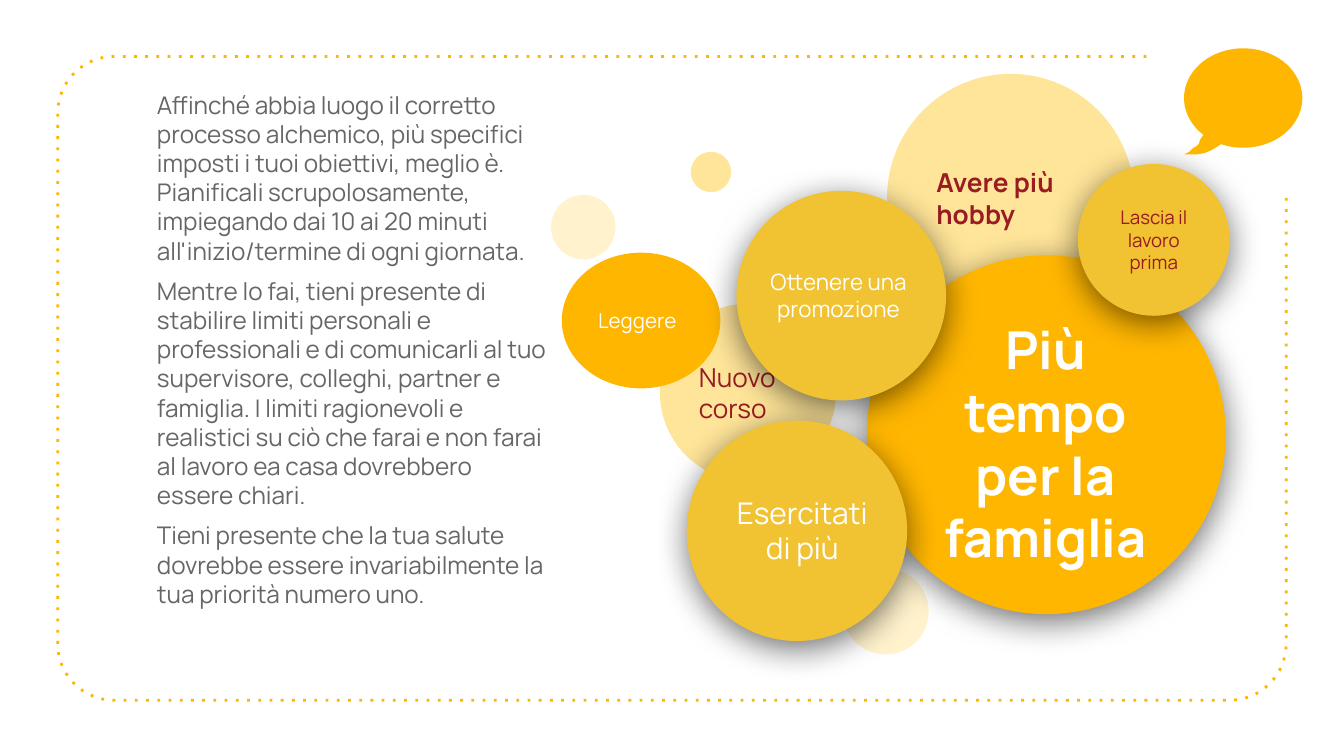
import math

import lxml.etree
import pptx
import pptx.dml.color
import pptx.enum.shapes
import pptx.enum.text
import pptx.oxml.ns
import pptx.util

Inches = pptx.util.Inches
qn = pptx.oxml.ns.qn
OVAL = pptx.enum.shapes.MSO_SHAPE.OVAL
LEFT = pptx.enum.text.PP_ALIGN.LEFT
CENTER = pptx.enum.text.PP_ALIGN.CENTER
MIDDLE = pptx.enum.text.MSO_ANCHOR.MIDDLE
TOP = pptx.enum.text.MSO_ANCHOR.TOP


class Theme:
    font = "Manrope"
    amber = pptx.dml.color.RGBColor.from_string("FFB600")
    gold = pptx.dml.color.RGBColor.from_string("F1C232")
    sand = pptx.dml.color.RGBColor.from_string("FFE599")
    cream = pptx.dml.color.RGBColor.from_string("FFF2CC")
    red = pptx.dml.color.RGBColor.from_string("981C22")
    gray = pptx.dml.color.RGBColor.from_string("666666")
    white = pptx.dml.color.RGBColor.from_string("FFFFFF")
    tiny, small, label, body, medium, large, hero = map(
        pptx.util.Pt, (10, 11, 12, 13, 14, 16, 28))


def arc(center_x, center_y, radius_x, radius_y, start, end, steps):
    angles = [math.radians(start + (end - start) * step / steps) for step in range(steps + 1)]
    return [(Inches(center_x + radius_x * math.cos(angle)),
             Inches(center_y + radius_y * math.sin(angle))) for angle in angles]


def write_text(shape, paragraphs, size, color, bold=False, align=LEFT, anchor=MIDDLE, gap=0):
    frame = shape.text_frame
    frame.word_wrap = True
    frame.vertical_anchor = anchor
    frame.margin_left = frame.margin_right = Inches(0.1)
    frame.margin_top = frame.margin_bottom = Inches(0.1)
    frame.text = "\n".join(paragraphs)
    for para in frame.paragraphs:
        para.alignment = align
        para.space_before = pptx.util.Pt(gap)
        para.font.name = Theme.font
        para.font.size = size
        para.font.bold = bold
        para.font.color.rgb = color


deck = pptx.Presentation()
deck.slide_width = Inches(10)
deck.slide_height = deck.slide_width * 9 // 16
page = deck.slides.add_slide(deck.slide_layouts[6])

border_points = [(Inches(8.53), Inches(0.42))]
for center_x, center_y, start in ((0.85, 0.84, 270), (0.85, 4.79, 180), (9.15, 4.79, 90)):
    border_points += arc(center_x, center_y, 0.42, 0.42, start, start - 90, 16)
border_points.append((Inches(9.57), Inches(1.46)))
builder = page.shapes.build_freeform(*border_points[0])
builder.add_line_segments(border_points[1:], close=False)
border = builder.convert_to_shape()
border.shadow.inherit = False
border.fill.background()
border.line.color.rgb = Theme.amber
border.line.width = pptx.util.Pt(1.5)
lxml.etree.SubElement(border.element.spPr.find(qn("a:ln")), qn("a:prstDash"), val="dot")

flat_circles = [
    (6.27, 4.23, 0.64, 0.64, Theme.cream, None),
    (4.1, 1.45, 0.48, 0.48, Theme.cream, None),
    (4.91, 2.26, 1.31, 1.32, Theme.sand, ("Nuovo corso", Theme.medium, Theme.red, False)),
    (6.6, 0.55, 1.84, 1.85, Theme.sand, ("Avere più hobby", Theme.medium, Theme.red, True)),
    (4.18, 1.88, 1.18, 1.01, Theme.amber, ("Leggere", Theme.small, Theme.white, False)),
    (5.14, 1.13, 0.3, 0.3, Theme.sand, None),
]
for left, top, width, height, fill, caption in flat_circles:
    circle = page.shapes.add_shape(OVAL, Inches(left), Inches(top), Inches(width), Inches(height))
    circle.shadow.inherit = False
    circle.fill.solid()
    circle.fill.fore_color.rgb = fill
    circle.line.fill.background()
    if caption:
        text, size, color, bold = caption
        write_text(circle, [text], size, color, bold)

raised_circles = [
    (6.45, 1.9, 2.67, Theme.amber, (6.76, 2.66, 2.04, 1.27),
     "Più tempo per la famiglia", Theme.hero, Theme.white, True),
    (5.48, 1.42, 1.56, Theme.gold, (5.61, 1.68, 1.26, 1.03),
     "Ottenere una promozione", Theme.label, Theme.white, False),
    (5.11, 3.13, 1.64, Theme.gold, (5.34, 3.43, 1.26, 1.03),
     "Esercitati di più", Theme.large, Theme.white, False),
    (8.02, 1.22, 1.13, Theme.gold, (8.2, 1.41, 0.77, 0.75),
     "Lascia il lavoro prima", Theme.tiny, Theme.red, False),
]
for left, top, diameter, fill, label_area, text, size, color, bold in raised_circles:
    circle = page.shapes.add_shape(
        OVAL, Inches(left), Inches(top), Inches(diameter), Inches(diameter))
    circle.fill.solid()
    circle.fill.fore_color.rgb = fill
    circle.line.fill.background()
    circle.shadow.inherit = False
    effects = circle.element.spPr.find(qn("a:effectLst"))
    shadow = lxml.etree.SubElement(
        effects, qn("a:outerShdw"), blurRad=str(pptx.util.Pt(18)), dist=str(pptx.util.Pt(4)),
        dir="5400000", algn="bl", rotWithShape="0")
    shadow_color = lxml.etree.SubElement(shadow, qn("a:srgbClr"), val="000000")
    lxml.etree.SubElement(shadow_color, qn("a:alpha"), val="55000")
    label = page.shapes.add_textbox(*map(Inches, label_area))
    write_text(label, [text], size, color, bold, CENTER)
    if fill == Theme.amber:
        label.fill.solid()
        label.fill.fore_color.rgb = fill

bubble_points = arc(9.25, 0.73, 0.44, 0.37, 132, 472, 68)
tail = [(9.06, 1.09), (9.01, 1.12), (8.96, 1.14), (8.9, 1.15), (8.81, 1.15), (8.85, 1.13),
        (8.88, 1.1), (8.9, 1.09), (8.92, 1.07), (8.93, 1.04), (8.95, 1.01)]
bubble_points += [(Inches(x), Inches(y)) for x, y in tail]
builder = page.shapes.build_freeform(*bubble_points[0])
builder.add_line_segments(bubble_points[1:], close=True)
bubble = builder.convert_to_shape()
bubble.shadow.inherit = False
bubble.fill.solid()
bubble.fill.fore_color.rgb = Theme.amber
bubble.line.fill.background()

advice = [
    "Affinché abbia luogo il corretto processo alchemico, più specifici imposti i tuoi "
    "obiettivi, meglio è. Pianificali scrupolosamente, impiegando dai 10 ai 20 minuti "
    "all'inizio/termine di ogni giornata.",
    "Mentre lo fai, tieni presente di stabilire limiti personali e professionali e di "
    "comunicarli al tuo supervisore, colleghi, partner e famiglia. I limiti ragionevoli e "
    "realistici su ciò che farai e non farai al lavoro ea casa dovrebbero essere chiari.",
    "Tieni presente che la tua salute dovrebbe essere invariabilmente la tua priorità "
    "numero uno.",
]
advice_box = page.shapes.add_textbox(Inches(1.07), Inches(0.57), Inches(3.1), Inches(4.53))
write_text(advice_box, advice, Theme.body, Theme.gray, anchor=TOP, gap=6)

deck.save("out.pptx")
